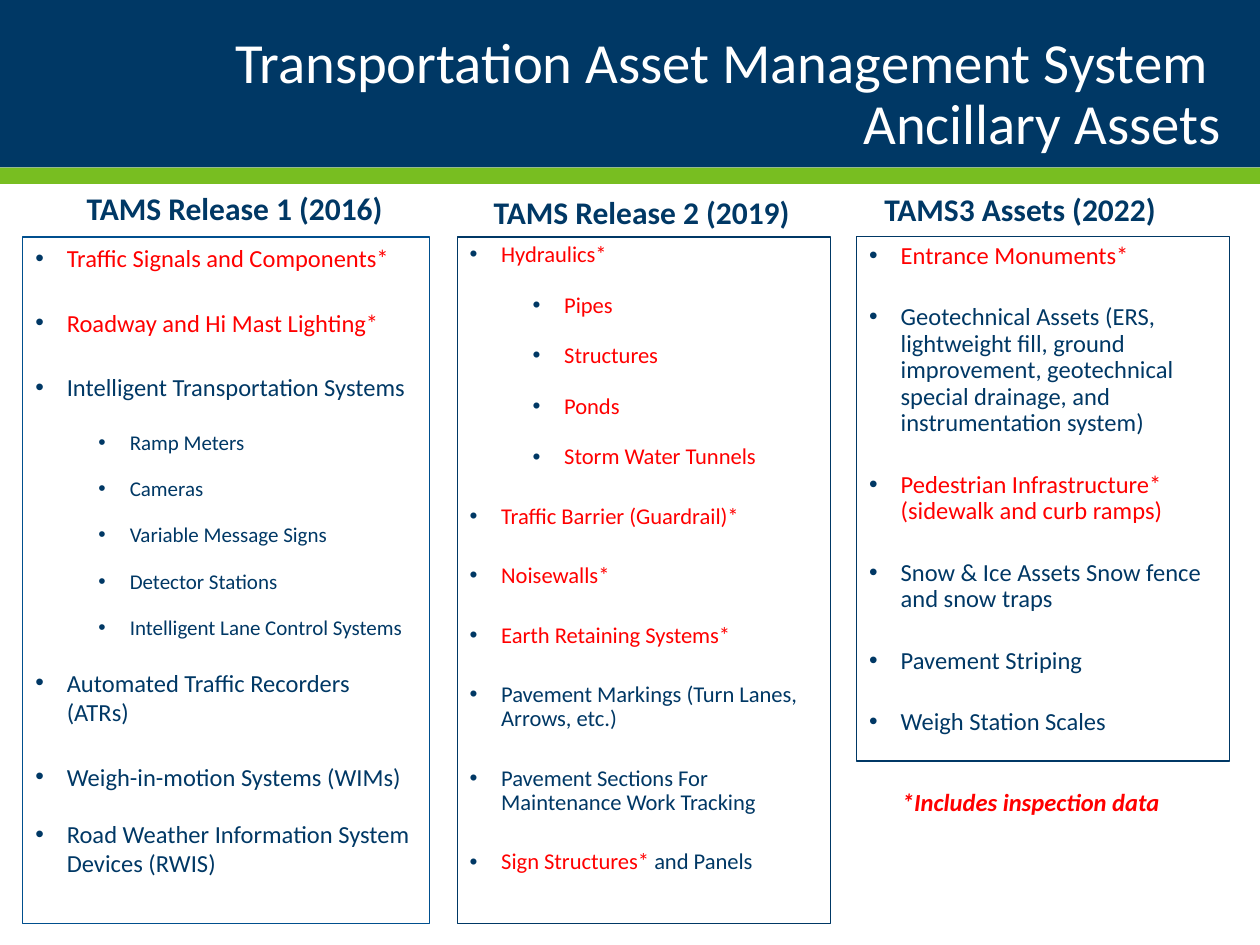
from lxml.etree import SubElement
from pptx import Presentation
from pptx.dml.color import RGBColor
from pptx.enum.shapes import MSO_SHAPE
from pptx.enum.text import MSO_ANCHOR, MSO_AUTO_SIZE, PP_ALIGN
from pptx.oxml.ns import qn
from pptx.util import Inches, Pt

NAVY, GREEN, RED, WHITE = "003865", "78BE21", "FF0000", "FFFFFF"

RELEASE_1 = [
    (0, [("Traffic Signals and Components*", RED)]),
    (0, [("Roadway and Hi Mast Lighting*", RED)]),
    (0, [("Intelligent Transportation Systems", NAVY)]),
    (1, [("Ramp Meters", NAVY)]),
    (1, [("Cameras", NAVY)]),
    (1, [("Variable Message Signs", NAVY)]),
    (1, [("Detector Stations", NAVY)]),
    (1, [("Intelligent Lane Control Systems", NAVY)]),
    (0, [("Automated Traffic Recorders (ATRs)", NAVY)]),
    (0, [("Weigh-in-motion Systems (WIMs)", NAVY)]),
    (0, [("Road Weather Information System Devices (RWIS)", NAVY)]),
]
RELEASE_2 = [
    (0, [("Hydraulics*", RED)]),
    (1, [("Pipes", RED)]),
    (1, [("Structures", RED)]),
    (1, [("Ponds", RED)]),
    (1, [("Storm Water Tunnels", RED)]),
    (0, [("Traffic Barrier (Guardrail)*", RED)]),
    (0, [("Noisewalls*", RED)]),
    (0, [("Earth Retaining Systems*", RED)]),
    (0, [("Pavement Markings (Turn Lanes, Arrows, etc.)", NAVY)]),
    (0, [("Pavement Sections For Maintenance Work Tracking", NAVY)]),
    (0, [("Sign Structures* ", RED), ("and Panels", NAVY)]),
]
TAMS3 = [
    (0, [("Entrance Monuments*", RED)]),
    (0, [("Geotechnical Assets (ERS, lightweight fill, ground improvement, "
          "geotechnical special drainage, and instrumentation system)", NAVY)]),
    (0, [("Pedestrian Infrastructure* \n(sidewalk and curb ramps)", RED)]),
    (0, [("Snow & Ice Assets Snow fence and snow traps", NAVY)]),
    (0, [("Pavement Striping", NAVY)]),
    (0, [("Weigh Station Scales", NAVY)]),
]


def color(value):
    """Turn a hex string into a colour."""
    return RGBColor.from_string(value)


def place(shape, box):
    """Move and size a shape to a box in inches."""
    shape.left, shape.top, shape.width, shape.height = map(Inches, box)


def add_text(paragraph, text, size=14, fill=NAVY, bold=False, italic=False):
    """Append formatted text, turning each newline into a line break."""
    for index, line in enumerate(text.split("\n")):
        if index:
            paragraph.add_line_break()
        run = paragraph.add_run()
        run.text = line
        font = run.font
        font.name, font.size, font.bold, font.italic = "Calibri", Pt(size), bold, italic
        font.color.rgb = color(fill)


def add_bullet(paragraph, level):
    """Give a paragraph a navy bullet with a hanging indent."""
    paragraph.level = level
    properties = paragraph._p.get_or_add_pPr()
    properties.set("marL", str(Inches(0.25 + 0.5 * level)))
    properties.set("indent", str(Inches(-0.25)))
    bullet_color = SubElement(properties, qn("a:buClr"))
    SubElement(bullet_color, qn("a:srgbClr")).set("val", NAVY)
    SubElement(properties, qn("a:buFont")).set("typeface", "Arial")
    SubElement(properties, qn("a:buChar")).set("char", "•")


def add_band(slide, box, fill):
    """Draw a full-width band behind everything else."""
    band = slide.shapes.add_shape(MSO_SHAPE.RECTANGLE, *map(Inches, box))
    band.shadow.inherit = False
    band.fill.solid()
    band.fill.fore_color.rgb = color(fill)
    band.line.fill.background()
    slide.shapes._spTree.insert(2, band._element)


def add_label(slide, box, text, wrap=False, **text_format):
    """Place a single-line text box."""
    label = slide.shapes.add_textbox(*map(Inches, box))
    label.text_frame.word_wrap = wrap
    add_text(label.text_frame.paragraphs[0], text, **text_format)


def fill_header(slide, box, text):
    """Place the right-aligned title over its bands."""
    add_band(slide, (0, 1.33, 10, 0.13), GREEN)
    add_band(slide, (0, 0, 10, 1.33), NAVY)
    title = slide.shapes.title
    place(title, box)
    frame = title.text_frame
    frame.auto_size = MSO_AUTO_SIZE.NONE
    frame.vertical_anchor = MSO_ANCHOR.MIDDLE
    paragraph = frame.paragraphs[0]
    paragraph.alignment = PP_ALIGN.RIGHT
    paragraph.line_spacing = 0.9
    add_text(paragraph, text, size=32.4, fill=WHITE)


def fill_list(shape, box, items, size=14, sub_size=12, spacing=0.9,
              sub_space=(6, 6), last_space=(10, 10), outline=NAVY):
    """Outline a shape and fill it with a two-level asset list."""
    place(shape, box)
    shape.line.color.rgb = color(outline)
    shape.line.width = Pt(0.75)
    frame = shape.text_frame
    frame.word_wrap = True
    frame.auto_size = MSO_AUTO_SIZE.NONE
    frame.vertical_anchor = MSO_ANCHOR.TOP
    for index, (level, runs) in enumerate(items):
        paragraph = frame.add_paragraph() if index else frame.paragraphs[0]
        add_bullet(paragraph, level)
        is_last = index == len(items) - 1
        before, after = sub_space if level else last_space if is_last else (10, 10)
        paragraph.alignment = PP_ALIGN.LEFT
        paragraph.line_spacing = spacing
        paragraph.space_before = Pt(before if index else 0)
        paragraph.space_after = Pt(after)
        for text, fill in runs:
            add_text(paragraph, text, size=sub_size if level else size, fill=fill)


def add_list_box(slide, box, items, **list_format):
    """Add a white rectangle that holds an asset list."""
    shape = slide.shapes.add_shape(MSO_SHAPE.RECTANGLE, *map(Inches, box))
    shape.shadow.inherit = False
    shape.fill.solid()
    shape.fill.fore_color.rgb = color(WHITE)
    fill_list(shape, box, items, **list_format)


def main():
    """Build and save the ancillary assets slide."""
    presentation = Presentation()
    presentation.slide_width, presentation.slide_height = Inches(10), Inches(7.5)
    slide = presentation.slides.add_slide(presentation.slide_layouts[1])
    fill_header(slide, (0.08, 0.26, 9.71, 1),
                "Transportation Asset Management System \nAncillary Assets")
    fill_list(slide.placeholders[1], (0.18, 1.88, 3.23, 5.45), RELEASE_1,
              spacing=1.0, last_space=(6, 6), outline="004F8E")
    add_list_box(slide, (3.63, 1.88, 2.96, 5.45), RELEASE_2,
                 size=12.9, sub_size=12.9, sub_space=(5, 10))
    add_list_box(slide, (6.8, 1.88, 2.96, 4.16), TAMS3)
    headings = [
        ((0.59, 1.45, 2.57, 0.4), "TAMS Release 1 (2016)"),
        ((3.82, 1.48, 2.57, 0.4), "TAMS Release 2 (2019)"),
        ((6.92, 1.46, 2.43, 0.4), "TAMS3 Assets (2022)"),
    ]
    for box, text in headings:
        add_label(slide, box, text, size=18, bold=True)
    add_label(slide, (7.06, 6.2, 2.44, 0.34), "*Includes inspection data",
              wrap=True, fill=RED, bold=True, italic=True)
    presentation.save("out.pptx")


if __name__ == "__main__":
    main()
